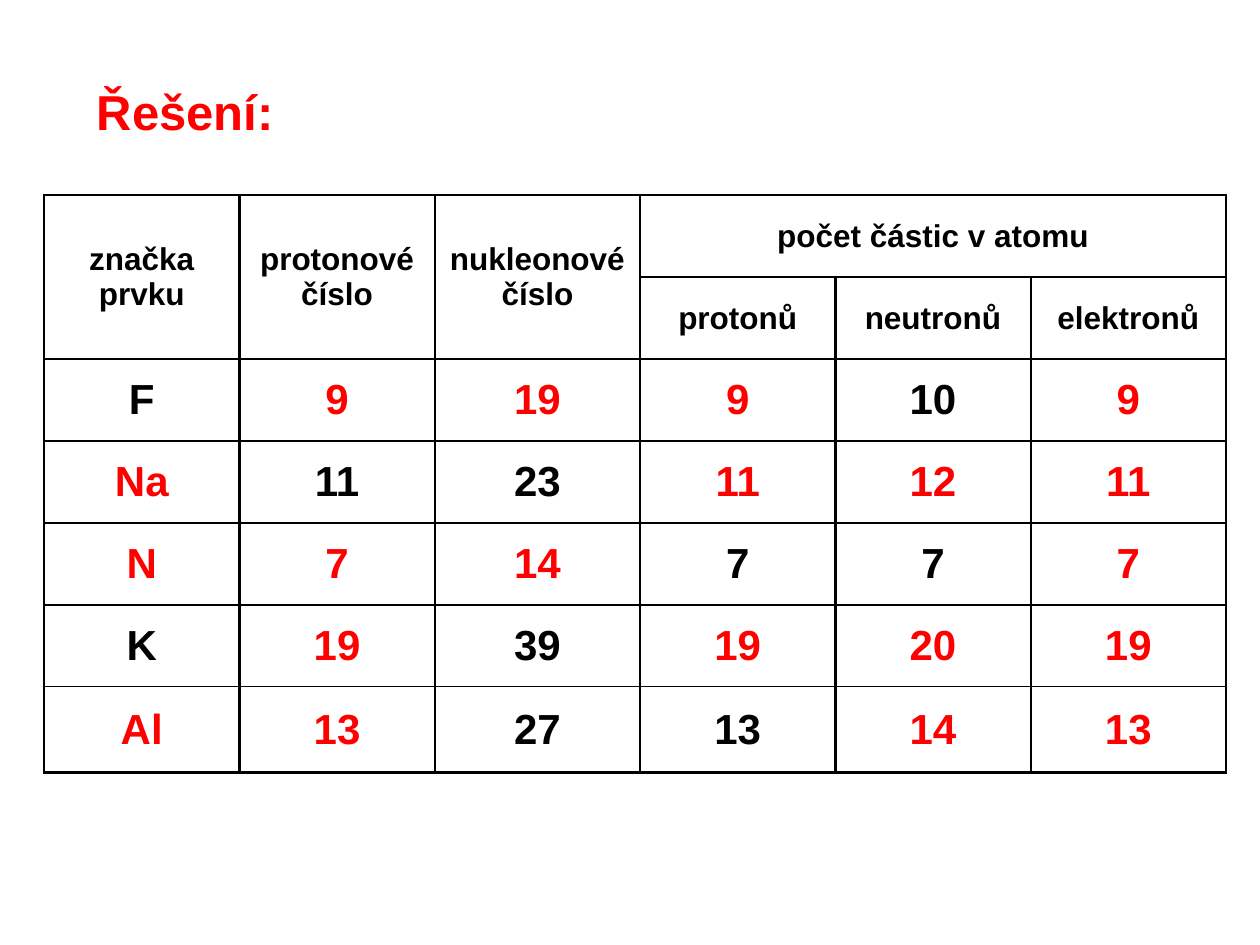
import itertools
from typing import NamedTuple

import pptx
import pptx.dml.color
import pptx.enum.text
import pptx.oxml
import pptx.oxml.ns
import pptx.util

Inches = pptx.util.Inches
Pt = pptx.util.Pt
BLACK = pptx.dml.color.RGBColor(0x00, 0x00, 0x00)
RED = pptx.dml.color.RGBColor(0xFF, 0x00, 0x00)
FONT = "Arial"

COLUMN_WIDTHS = [1.55, 1.55, 1.63, 1.55, 1.55, 1.55]
ROW_HEIGHTS = [0.65] * 6 + [0.68]
HEADER_ROWS = 2
THICK_RULES = {0, HEADER_ROWS, len(ROW_HEIGHTS)}
THICK, THIN = 1.5, 1


class Entry(NamedTuple):
    row: int
    column: int
    text: str
    size: int = 18
    color: pptx.dml.color.RGBColor = BLACK
    row_span: int = 1
    column_span: int = 1


class Element(NamedTuple):
    values: str
    given: set[int]  # columns stated in the exercise, the rest are answers


HEADERS = [
    Entry(0, 0, "značka\nprvku", row_span=2),
    Entry(0, 1, "protonové číslo", row_span=2),
    Entry(0, 2, "nukleonové číslo", row_span=2),
    Entry(0, 3, "počet částic v atomu", column_span=3),
    Entry(1, 3, "protonů"),
    Entry(1, 4, "neutronů"),
    Entry(1, 5, "elektronů"),
]
ELEMENTS = [
    Element("F 9 19 9 10 9", {0, 4}),
    Element("Na 11 23 11 12 11", {1, 2}),
    Element("N 7 14 7 7 7", {3, 4}),
    Element("K 19 39 19 20 19", {0, 2}),
    Element("Al 13 27 13 14 13", {2, 3}),
]


def style_text(frame, size: int, color: pptx.dml.color.RGBColor) -> None:
    for paragraph in frame.paragraphs:
        for run in paragraph.runs:
            run.font.name = FONT
            run.font.size = Pt(size)
            run.font.bold = True
            run.font.color.rgb = color


def add_border(cell, side: str, width: float) -> None:
    cell._tc.get_or_add_tcPr().append(pptx.oxml.parse_xml(
        f'<a:ln{side} {pptx.oxml.ns.nsdecls("a")} w="{Pt(width)}">'
        f'<a:solidFill><a:srgbClr val="{BLACK}"/></a:solidFill></a:ln{side}>'))


def rule_width(rule: int) -> float:
    return THICK if rule in THICK_RULES else THIN


def frame_entry(table, entry: Entry) -> None:
    """Border the entry's outer edges, leaving merged interiors open."""
    bottom = entry.row + entry.row_span
    right = entry.column + entry.column_span
    for row, column in itertools.product(range(entry.row, bottom),
                                         range(entry.column, right)):
        cell = table.cell(row, column)
        origin = (row, column) == (entry.row, entry.column)
        edges = [
            ("L", THICK, column == entry.column),
            ("R", THICK, origin or column == right - 1),
            ("T", rule_width(entry.row), row == entry.row),
            ("B", rule_width(bottom), origin or row == bottom - 1),
        ]
        for side, width, outer in edges:
            if outer:
                add_border(cell, side, width)
        cell.fill.background()


def fill_entry(table, entry: Entry) -> None:
    cell = table.cell(entry.row, entry.column)
    if entry.row_span * entry.column_span > 1:
        cell.merge(table.cell(entry.row + entry.row_span - 1,
                              entry.column + entry.column_span - 1))
    cell.margin_left = cell.margin_right = Inches(0.04)
    cell.margin_top = cell.margin_bottom = 0
    cell.vertical_anchor = pptx.enum.text.MSO_ANCHOR.MIDDLE
    cell.text_frame.text = entry.text
    for paragraph in cell.text_frame.paragraphs:
        paragraph.alignment = pptx.enum.text.PP_ALIGN.CENTER
    style_text(cell.text_frame, entry.size, entry.color)
    frame_entry(table, entry)


def add_heading(slide) -> None:
    heading = slide.shapes.add_textbox(Inches(0.67), Inches(0.6),
                                       Inches(1.62), Inches(0.57))
    heading.text_frame.word_wrap = False
    heading.text_frame.auto_size = pptx.enum.text.MSO_AUTO_SIZE.SHAPE_TO_FIT_TEXT
    heading.text_frame.text = "Řešení:"
    style_text(heading.text_frame, 28, RED)


def add_particle_table(slide) -> None:
    table = slide.shapes.add_table(
        len(ROW_HEIGHTS), len(COLUMN_WIDTHS), Inches(0.35), Inches(1.55),
        Inches(sum(COLUMN_WIDTHS)), Inches(sum(ROW_HEIGHTS))).table
    table.first_row = table.horz_banding = False
    for column, width in zip(table.columns, COLUMN_WIDTHS):
        column.width = Inches(width)
    for row, height in zip(table.rows, ROW_HEIGHTS):
        row.height = Inches(height)
    answers = [
        Entry(row, column, value, 24, BLACK if column in element.given else RED)
        for row, element in enumerate(ELEMENTS, HEADER_ROWS)
        for column, value in enumerate(element.values.split())
    ]
    for entry in HEADERS + answers:
        fill_entry(table, entry)


def main() -> None:
    presentation = pptx.Presentation()
    presentation.slide_width = Inches(10)
    presentation.slide_height = Inches(7.5)
    slide = presentation.slides.add_slide(presentation.slide_layouts[6])
    add_particle_table(slide)
    add_heading(slide)
    presentation.save("out.pptx")


if __name__ == "__main__":
    main()
